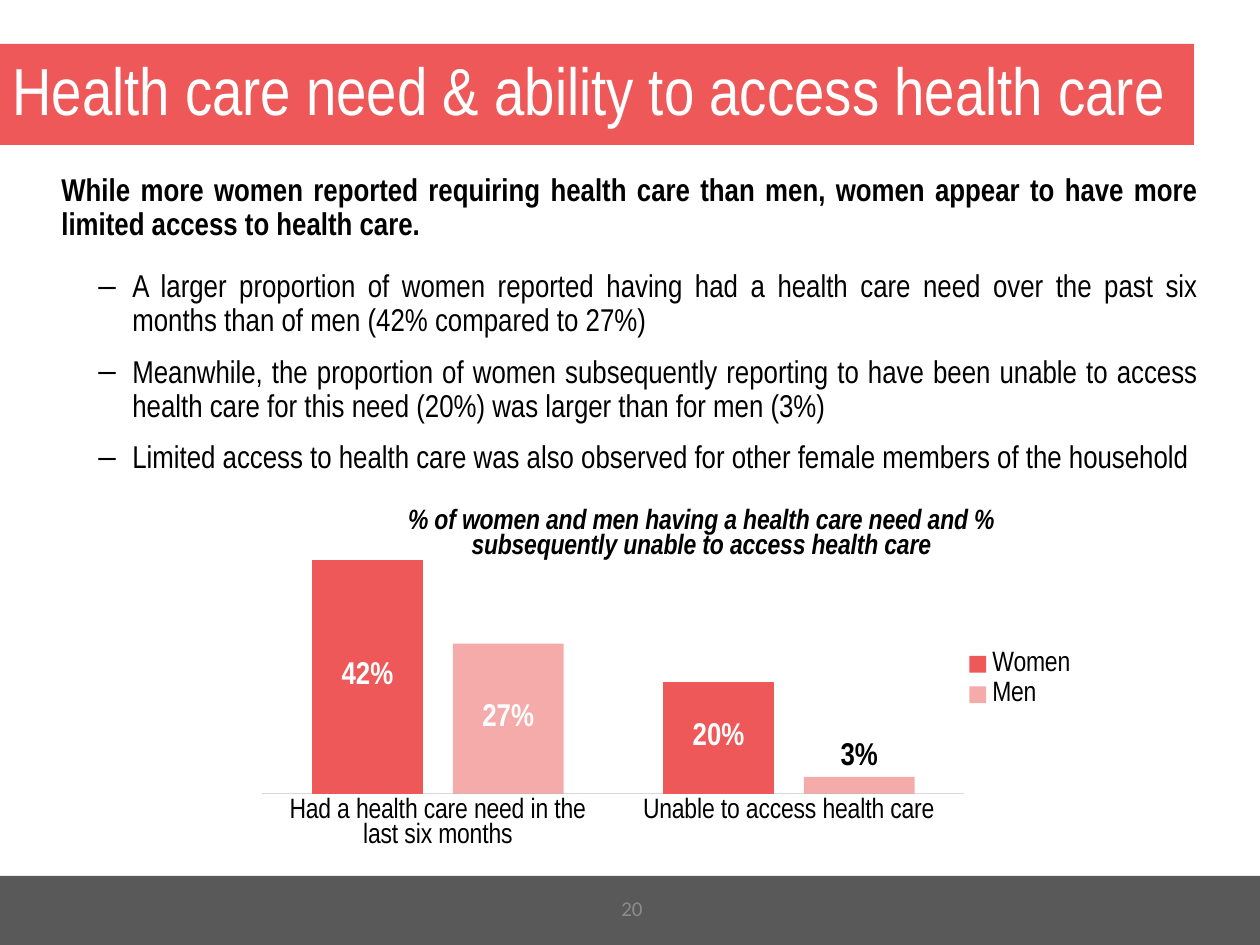
from lxml import etree
from pptx import Presentation
from pptx.chart.data import CategoryChartData
from pptx.dml.color import RGBColor
from pptx.enum.chart import XL_CHART_TYPE, XL_LABEL_POSITION, XL_LEGEND_POSITION, XL_TICK_MARK
from pptx.enum.shapes import MSO_SHAPE
from pptx.enum.text import MSO_ANCHOR, PP_ALIGN
from pptx.oxml import parse_xml
from pptx.oxml.ns import nsdecls, qn
from pptx.util import Emu, Pt

LEFT, CENTER, JUSTIFY = PP_ALIGN.LEFT, PP_ALIGN.CENTER, PP_ALIGN.JUSTIFY
TOP, MIDDLE = MSO_ANCHOR.TOP, MSO_ANCHOR.MIDDLE
LABEL_CENTER, LABEL_ABOVE = XL_LABEL_POSITION.CENTER, XL_LABEL_POSITION.OUTSIDE_END
NO_TICK = XL_TICK_MARK.NONE
PX = 914400 / 126

THEME = {
    "coral": "EE5859", "footer": "595959", "text": "000000", "white": "FFFFFF",
    "number": "8C8C8C", "axis": "D9D9D9",
    "font": "Arial Narrow", "number_font": "Calibri",
    "title": 38, "body": 18, "chart": 16, "label": 18, "page": 12,
}


def px(*lengths):
    return [Emu(round(length * PX)) for length in lengths]


def write(frame, text, *, size, color=THEME["text"], font=THEME["font"], bold=False,
          italic=False, align=LEFT, spacing=1.0, before=0, after=0, bullet=None, new=False):
    para = frame.add_paragraph() if new else frame.paragraphs[0]
    para.alignment, para.line_spacing = align, spacing
    para.space_before, para.space_after = Pt(before), Pt(after)
    if bullet:
        properties = para._p.get_or_add_pPr()
        indent, hanging = px(71, -34)
        properties.set("marL", str(indent))
        properties.set("indent", str(hanging))
        etree.SubElement(properties, qn("a:buFont"), typeface="Arial")
        etree.SubElement(properties, qn("a:buChar"), char=bullet)
    span = para.add_run()
    span.text = text
    span.font.name, span.font.size = font, Pt(size)
    span.font.bold, span.font.italic = bold, italic
    span.font.color.rgb = RGBColor.from_string(color)


deck = Presentation()
deck.slide_width, deck.slide_height = px(1260, 945)
page = deck.slides.add_slide(deck.slide_layouts[6])

# Title band and footer band
bands = []
for bounds, color in (((0, 876, 1260, 69), THEME["footer"]),
                      ((0, 44, 1194, 101), THEME["coral"])):
    band = page.shapes.add_shape(MSO_SHAPE.RECTANGLE, *px(*bounds))
    band.shadow.inherit = False
    band.fill.solid()
    band.fill.fore_color.rgb = RGBColor.from_string(color)
    band.line.fill.background()
    bands.append(band)
title_frame = bands[1].text_frame
title_frame.word_wrap, title_frame.vertical_anchor = True, MIDDLE
write(title_frame, "Health care need & ability to access health care",
      size=THEME["title"], color=THEME["white"], spacing=0.9)

# Key message and findings
body = page.shapes.add_textbox(*px(49, 168, 1162, 306)).text_frame
body.word_wrap, body.vertical_anchor = True, TOP
write(body, "While more women reported requiring health care than men, women appear to have "
      "more limited access to health care.",
      size=THEME["body"], bold=True, align=JUSTIFY, spacing=0.9, after=6)
for finding in (
    "A larger proportion of women reported having had a health care need over the past six "
    "months than of men (42% compared to 27%)",
    "Meanwhile, the proportion of women subsequently reporting to have been unable to access "
    "health care for this need (20%) was larger than for men (3%)",
    "Limited access to health care was also observed for other female members of the household",
):
    write(body, finding, size=THEME["body"], align=JUSTIFY, spacing=0.9, before=10,
          bullet="–", new=True)

# Column chart
data = CategoryChartData(number_format="0%")
data.categories = ["Had a health care need in the last six months",
                   "Unable to access health care"]
data.add_series("Women", (0.42, 0.20))
data.add_series("Men", (0.27, 0.03))
chart = page.shapes.add_chart(XL_CHART_TYPE.COLUMN_CLUSTERED, *px(242, 472, 848, 415), data).chart
chart.font.name, chart.font.size = THEME["font"], Pt(THEME["chart"])
chart.font.color.rgb = RGBColor.from_string(THEME["text"])

chart.has_title = True
write(chart.chart_title.text_frame,
      "% of women and men having a health care need and % subsequently unable to access health care",
      size=THEME["chart"], bold=True, italic=True, align=CENTER)
chart.chart_title.include_in_layout = False

chart.has_legend = True
chart.legend.position = XL_LEGEND_POSITION.RIGHT
chart.legend.include_in_layout = False

categories, values = chart.category_axis, chart.value_axis
categories.major_tick_mark = categories.minor_tick_mark = NO_TICK
categories.format.line.color.rgb = RGBColor.from_string(THEME["axis"])
categories.format.line.width = Pt(0.75)
values.minimum_scale, values.maximum_scale = 0, 0.5
values.has_major_gridlines = False
values.visible = False

# Manual places of the title and the plot, as shares of the chart
for parent, target, places in (
    (chart.chart_title._element, "", {"x": 0.19, "y": 0.07}),
    (chart._chartSpace.chart.plotArea, '<c:layoutTarget val="inner"/>',
     {"x": 0.024, "y": 0.106, "w": 0.828, "h": 0.669}),
):
    modes = "".join(f'<c:{key}Mode val="edge"/>' for key in "xy")
    shares = "".join(f'<c:{key} val="{share}"/>' for key, share in places.items())
    for old in parent.findall(qn("c:layout")):
        parent.remove(old)
    layout = parse_xml(f'<c:layout {nsdecls("c")}><c:manualLayout>{target}{modes}{shares}'
                       '</c:manualLayout></c:layout>')
    text = parent.find(qn("c:tx"))
    parent.insert(0 if text is None else 1, layout)

# Series colours and value labels
plot = chart.plots[0]
plot.vary_by_categories = False
plot.gap_width, plot.overlap = 90, -27
for series, opacity in zip(plot.series, (100, 50)):
    series.format.fill.solid()
    series.format.fill.fore_color.rgb = RGBColor.from_string(THEME["coral"])
    if opacity < 100:
        color = series._element.spPr.find(".//" + qn("a:srgbClr"))
        etree.SubElement(color, qn("a:alpha"), val=str(opacity * 1000))
    labels = series.data_labels
    labels.show_value = True
    labels.number_format, labels.number_format_is_linked = "0%", False
    labels.position = LABEL_CENTER
    fonts = [(labels.font, THEME["white"])]
    if series.name == "Men":
        small = series.points[1].data_label
        small.position = LABEL_ABOVE
        fonts.append((small.font, THEME["text"]))
    for font, color in fonts:
        font.name, font.size, font.bold = THEME["font"], Pt(THEME["label"]), True
        font.color.rgb = RGBColor.from_string(color)

# Page number
number = page.shapes.add_textbox(*px(490, 883, 284, 50)).text_frame
number.word_wrap, number.vertical_anchor = True, MIDDLE
write(number, "20", size=THEME["page"], color=THEME["number"], font=THEME["number_font"],
      align=CENTER)

deck.save("out.pptx")
